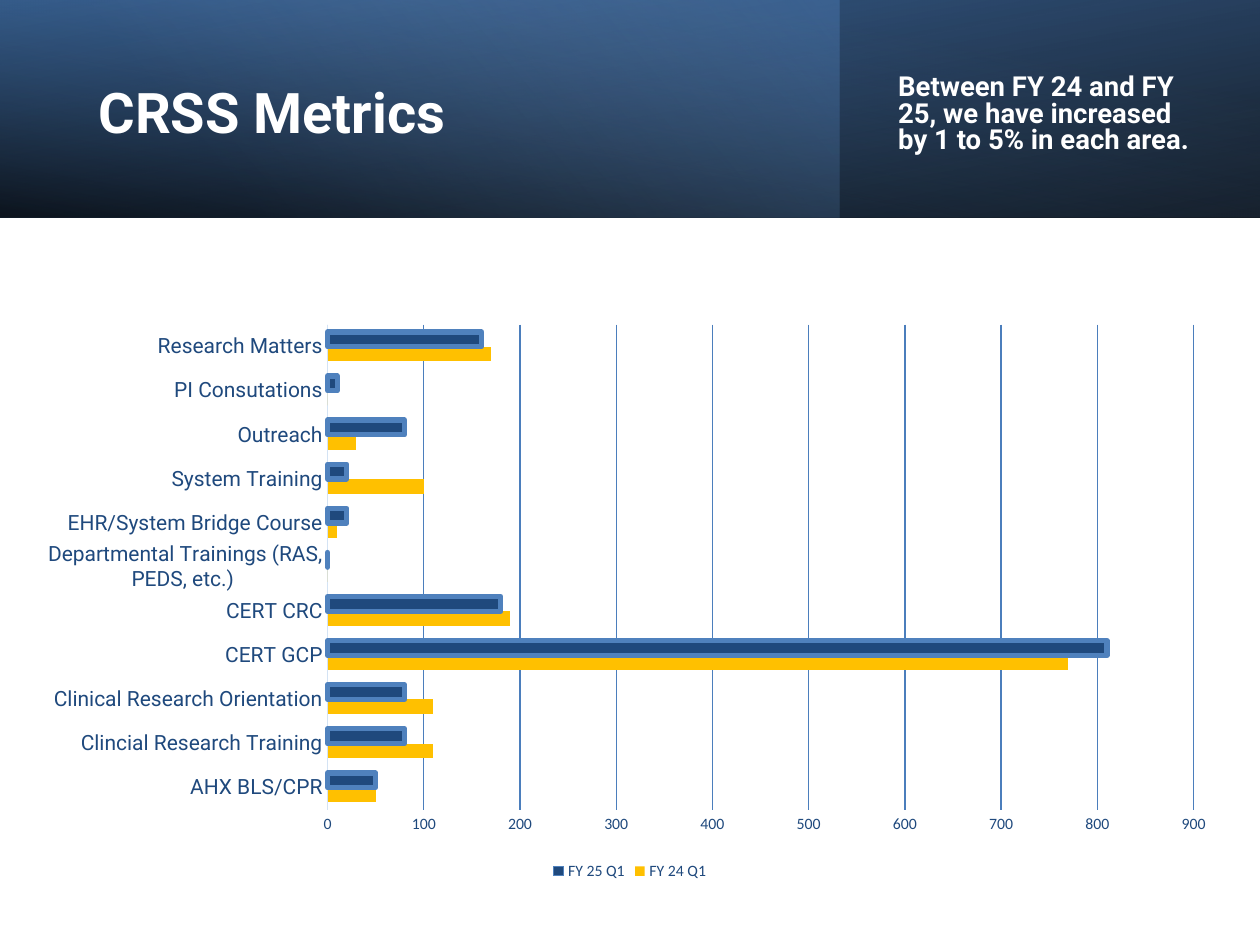
from dataclasses import dataclass

from lxml import etree
from pptx import Presentation
from pptx.chart.data import CategoryChartData
from pptx.dml.color import RGBColor
from pptx.enum.chart import XL_CHART_TYPE, XL_LEGEND_POSITION, XL_TICK_MARK
from pptx.enum.shapes import MSO_SHAPE
from pptx.enum.text import MSO_ANCHOR, PP_ALIGN
from pptx.oxml.ns import qn
from pptx.util import Inches, Pt

RECT = MSO_SHAPE.RECTANGLE
MIDDLE = MSO_ANCHOR.MIDDLE
LEFT = PP_ALIGN.LEFT
BAR = XL_CHART_TYPE.BAR_CLUSTERED
BOTTOM = XL_LEGEND_POSITION.BOTTOM
NO_TICK = XL_TICK_MARK.NONE


@dataclass(frozen=True)
class Theme:
    heading: str = "Roboto"
    body: str = "Calibri"
    white: str = "FFFFFF"
    black: str = "000000"
    navy: str = "1F497D"
    deep: str = "376092"
    blue: str = "4F81BD"
    pale: str = "95B3D7"
    gold: str = "FFC000"
    axis: str = "D4E3F4"
    grid: str = "4B7EBC"
    title_size: float = 32
    note_size: float = 15.7
    category_size: float = 12
    small_size: float = 9


T = Theme()

CATEGORIES = [
    "AHX BLS/CPR", "Clincial Research Training", "Clinical Research Orientation",
    "CERT GCP", "CERT CRC", "Departmental Trainings (RAS, PEDS, etc.) ",
    "EHR/System Bridge Course", "System Training", "Outreach",
    "PI Consutations", "Research Matters",
]
SERIES = {
    "FY 24 Q1": [50, 110, 110, 770, 190, 0, 10, 100, 30, 0, 170],
    "FY 25 Q1": [50, 80, 80, 810, 180, 0, 20, 20, 80, 10, 160],
}


def rgb(color):
    return RGBColor.from_string(color)


def style(font, name, size, color, bold=False):
    font.name = name
    font.size = Pt(size)
    font.color.rgb = rgb(color)
    font.bold = bold


def stroke(line, color, width):
    line.color.rgb = rgb(color)
    line.width = Pt(width)


def place(sp, box):
    sp.left, sp.top, sp.width, sp.height = (Inches(v) for v in box)


def gradient_panel(s, box, stops, angle, rotation=0, flip=False):
    sp = s.shapes.add_shape(RECT, *(Inches(v) for v in box))
    sp.shadow.inherit = False
    sp.line.fill.background()
    sp.rotation = rotation
    if flip:
        sp._element.spPr.find(qn("a:xfrm")).set("flipH", "1")
    sp.fill.gradient()
    grad = sp._element.spPr.find(qn("a:gradFill"))
    for child in list(grad):
        grad.remove(child)
    grad.set("rotWithShape", "1")
    stop_list = etree.SubElement(grad, qn("a:gsLst"))
    for position, color, alpha in stops:
        stop = etree.SubElement(stop_list, qn("a:gs"), pos=str(position * 1000))
        clr = etree.SubElement(stop, qn("a:srgbClr"), val=color)
        etree.SubElement(clr, qn("a:alpha"), val=str(alpha * 1000))
    etree.SubElement(grad, qn("a:lin"), ang=str(angle * 60000), scaled="0")


def write(sp, text, size, spacing, before=0):
    tf = sp.text_frame
    tf.word_wrap = True
    tf.vertical_anchor = MIDDLE
    p = tf.paragraphs[0]
    p.alignment = LEFT
    p.line_spacing = spacing
    p.space_before = Pt(before)
    r = p.add_run()
    r.text = text
    style(r.font, T.heading, size, T.white, bold=True)


def header(s, box):
    x, y, w, h = box
    gradient_panel(s, box, [(0, T.black, 96), (100, T.deep, 100)], 100, 180, True)
    gradient_panel(s, (x, y, w * 2 / 3, h), [(0, T.blue, 41), (74, T.pale, 0)], 140)
    gradient_panel(s, box, [(0, T.black, 63), (78, T.blue, 15)], 260, flip=True)
    title = s.shapes.title
    place(title, (x + w * 0.057, y + h * 0.16, w * 0.58, h * 0.74))
    write(title, " CRSS Metrics", T.title_size, 0.9)
    s.shapes._spTree.append(title._element)
    note = s.shapes.add_textbox(0, 0, 0, 0)
    place(note, (x + w * 0.703, y + h * 0.25, w * 0.265, h * 0.56))
    write(note, "Between FY 24 and FY 25, we have increased by 1 to 5% in each area.",
          T.note_size, 0.8, 10)


def set_plot_area(chart, x, y, w, h):
    area = chart._chartSpace.chart.plotArea
    for old in area.findall(qn("c:layout")):
        area.remove(old)
    layout = etree.Element(qn("c:layout"))
    area.insert(0, layout)
    manual = etree.SubElement(layout, qn("c:manualLayout"))
    settings = [("layoutTarget", "inner"), ("xMode", "edge"), ("yMode", "edge"),
                ("x", x), ("y", y), ("w", w), ("h", h)]
    for tag, value in settings:
        etree.SubElement(manual, qn("c:" + tag), val=str(value))


def metrics_chart(s, box):
    data = CategoryChartData()
    data.categories = CATEGORIES
    for name, values in SERIES.items():
        data.add_series(name, values)
    chart = s.shapes.add_chart(BAR, *(Inches(v) for v in box), data).chart
    style(chart.font, T.body, 10, T.black)
    chart.has_title = False
    chart.has_legend = True
    chart.legend.position = BOTTOM
    chart.legend.include_in_layout = False
    style(chart.legend.font, T.body, T.small_size, T.navy)
    set_plot_area(chart, 0.242, 0.087, 0.739, 0.79)

    plot = chart.plots[0]
    plot.gap_width = 100
    plot.vary_by_categories = False
    for series, color in zip(plot.series, (T.gold, T.navy)):
        series.invert_if_negative = False
        series.format.fill.solid()
        series.format.fill.fore_color.rgb = rgb(color)
    stroke(plot.series[1].format.line, T.blue, 3)

    categories, values = chart.category_axis, chart.value_axis
    for axis in (categories, values):
        axis.major_tick_mark = axis.minor_tick_mark = NO_TICK
    style(categories.tick_labels.font, T.heading, T.category_size, T.navy)
    stroke(categories.format.line, T.axis, 0.75)
    style(values.tick_labels.font, T.body, T.small_size, T.navy)
    values.format.line.fill.background()
    values.minimum_scale, values.maximum_scale, values.major_unit = 0, 900, 100
    values.has_major_gridlines = True
    stroke(values.major_gridlines.format.line, T.grid, 0.75)


def main():
    prs = Presentation()
    prs.slide_width, prs.slide_height = Inches(10), Inches(7.5)
    s = prs.slides.add_slide(prs.slide_layouts[5])
    w, h = prs.slide_width.inches, prs.slide_height.inches
    header(s, (0, 0, w, h * 0.23))
    metrics_chart(s, (w * 0.035, h * 0.287, w * 0.93, h * 0.65))
    prs.save("out.pptx")


if __name__ == "__main__":
    main()
